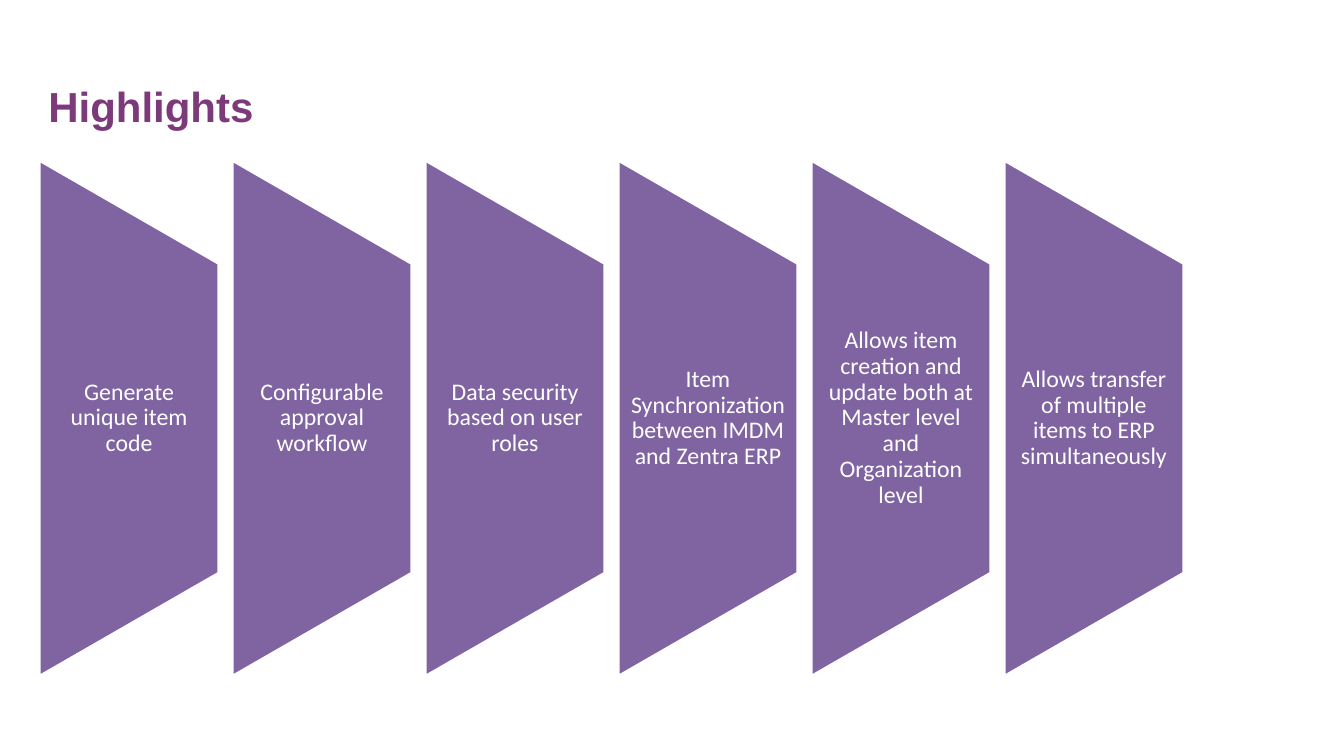
"""Build the Highlights slide: six upright panels with centred captions."""
import pptx
import pptx.dml.color
import pptx.enum.shapes
import pptx.enum.text
import pptx.util

Inches = pptx.util.Inches
Pt = pptx.util.Pt
ALIGN = pptx.enum.text.PP_ALIGN
ANCHOR = pptx.enum.text.MSO_ANCHOR

TITLE = "Highlights"
HIGHLIGHTS = [
    "Generate unique item code",
    "Configurable approval workflow",
    "Data security based on user roles",
    "Item Synchronization between IMDM and Zentra ERP",
    "Allows item creation and update both at Master level and Organization level",
    "Allows transfer of multiple items to ERP simultaneously",
]
PURPLE, PLUM, WHITE = "8064A2", "7C3A7A", "FFFFFF"
FIRST_LEFT, LAST_LEFT = 0.39, 9.96
PANEL_WIDTH, PANEL_HEIGHT, CAPTION_HEIGHT = 1.78, 5.12, 3.07
MIDDLE = 4.15
TITLE_FONT = {"name": "Arial", "size": Pt(30), "bold": True}
CAPTION_FONT = {"name": "Calibri", "size": Pt(17)}
TITLE_PLACE = {"left": Inches(0.38), "top": Inches(0.22),
               "width": Inches(9.71), "height": Inches(1.13)}
TITLE_FRAME = {"vertical_anchor": ANCHOR.BOTTOM, "word_wrap": True}
CAPTION_FRAME = {"vertical_anchor": ANCHOR.MIDDLE, "word_wrap": True,
                 "margin_left": Inches(0.11), "margin_right": Inches(0.11),
                 "margin_top": 0, "margin_bottom": 0}


def colour(value):
    return pptx.dml.color.RGBColor.from_string(value)


def apply(target, values):
    for name, value in values.items():
        setattr(target, name, value)


def write(box, text, frame_format, para_format, font_format, ink):
    apply(box.text_frame, frame_format)
    para = box.text_frame.paragraphs[0]
    apply(para, para_format)
    span = para.add_run()
    span.text = text
    apply(span.font, font_format)
    span.font.color.rgb = colour(ink)


def add_panel(page, left):
    centre = left + PANEL_WIDTH / 2
    panel = page.shapes.add_shape(
        pptx.enum.shapes.MSO_SHAPE.FLOWCHART_MANUAL_OPERATION,
        Inches(centre - PANEL_HEIGHT / 2), Inches(MIDDLE - PANEL_WIDTH / 2),
        Inches(PANEL_HEIGHT), Inches(PANEL_WIDTH))
    panel.rotation = 270
    panel.shadow.inherit = False
    panel.fill.solid()
    panel.fill.fore_color.rgb = colour(PURPLE)
    panel.line.color.rgb = colour(WHITE)
    panel.line.width = Pt(2)


def add_caption(page, left, text):
    box = page.shapes.add_textbox(
        Inches(left), Inches(MIDDLE - CAPTION_HEIGHT / 2),
        Inches(PANEL_WIDTH), Inches(CAPTION_HEIGHT))
    write(box, text, CAPTION_FRAME,
          {"alignment": ALIGN.CENTER, "line_spacing": 0.9}, CAPTION_FONT, WHITE)


def main():
    deck = pptx.Presentation()
    deck.slide_width, deck.slide_height = Inches(13.33), Inches(7.5)
    page = deck.slides.add_slide(deck.slide_layouts[5])
    title = page.shapes.title
    apply(title, TITLE_PLACE)
    write(title, TITLE, TITLE_FRAME, {"alignment": ALIGN.LEFT}, TITLE_FONT, PLUM)
    pitch = (LAST_LEFT - FIRST_LEFT) / (len(HIGHLIGHTS) - 1)
    for index, text in enumerate(HIGHLIGHTS):
        left = FIRST_LEFT + index * pitch
        add_panel(page, left)
        add_caption(page, left, text)
    deck.save("out.pptx")


if __name__ == "__main__":
    main()
